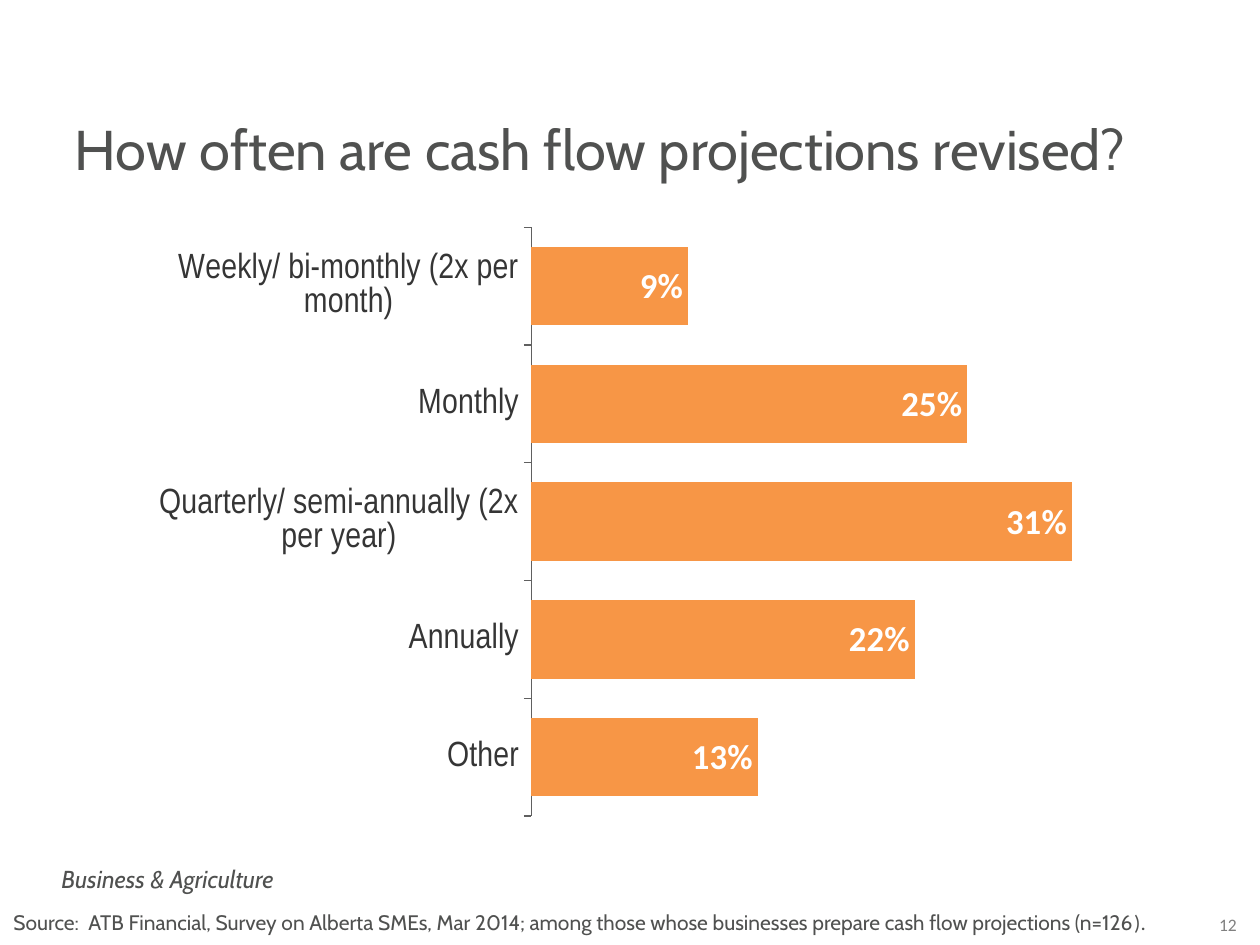
from pptx import Presentation
from pptx.chart.data import CategoryChartData
from pptx.dml.color import RGBColor
from pptx.enum.chart import XL_CHART_TYPE, XL_LABEL_POSITION, XL_TICK_LABEL_POSITION, XL_TICK_MARK
from pptx.enum.text import MSO_ANCHOR, PP_ALIGN
from pptx.oxml import parse_xml
from pptx.oxml.ns import nsdecls
from pptx.util import Emu, Pt

PX = 914400 // 126
GREY, ORANGE = "505150", "F79646"

# Content
TITLE = "How often are cash flow projections revised?"
REVISIONS = [  # top to bottom
    ("Weekly/ bi-monthly (2x per month)", 0.09),
    ("Monthly", 0.25),
    ("Quarterly/ semi-annually (2x per year)", 0.31),
    ("Annually", 0.22),
    ("Other", 0.13),
]
SOURCE = [
    ("Source:  ATB Financial, Survey on Alberta SMEs, Mar 2014; among those "
     "whose businesses prepare cash flow projections (n=126", "Cabin"),
    (").", "Calibri"),
]
# box in px, runs of (words, font), format, alignment
NOTES = [
    ((49, 857, 354, 43), [("Business & Agriculture", "Cabin")],
     dict(size=Pt(14), italic=True, color=GREY), PP_ALIGN.LEFT),
    ((1, 903, 1173, 38), SOURCE, dict(size=Pt(12), color=GREY), PP_ALIGN.LEFT),
    ((1197, 907, 62, 34), [("12", "Calibri")], dict(size=Pt(10), color="808080"), PP_ALIGN.CENTER),
]
TITLE_BOX = (62, 108, 1113, 81)
CHART_BOX = (159, 194, 983, 640)
PLOT = dict(x=0.373, y=0.052, w=0.627, h=0.92)


def px(*lengths):
    return [Emu(length * PX) for length in lengths]


def rgb(value):
    return RGBColor.from_string(value)


def style(font, color, **formats):
    font.color.rgb = rgb(color)
    for name, value in formats.items():
        setattr(font, name, value)


def fill_text(frame, runs, formats, align):
    frame.word_wrap = True
    frame.vertical_anchor = MSO_ANCHOR.MIDDLE
    paragraph = frame.paragraphs[0]
    paragraph.alignment = align
    for words, font_name in runs:
        run = paragraph.add_run()
        run.text = words
        style(run.font, name=font_name, **formats)


deck = Presentation()
deck.slide_width, deck.slide_height = px(1260, 945)
slide = deck.slides.add_slide(deck.slide_layouts[5])

# Title
title = slide.shapes.title
title.left, title.top, title.width, title.height = px(*TITLE_BOX)
fill_text(title.text_frame, [(TITLE, "Cabin")], dict(size=Pt(32), color=GREY), PP_ALIGN.LEFT)

# Bar chart: categories run upwards from the bottom
data = CategoryChartData(number_format="0%")
data.categories = [label for label, _ in reversed(REVISIONS)]
data.add_series("Series 1", [share for _, share in reversed(REVISIONS)])
chart = slide.shapes.add_chart(XL_CHART_TYPE.BAR_STACKED, *px(*CHART_BOX), data).chart
chart.has_legend = chart.has_title = False
style(chart.font, "353535", name="Cabin", size=Pt(14), bold=True)

bars = chart.plots[0]
bars.gap_width, bars.overlap, bars.vary_by_categories = 50, 100, False
bars.series[0].format.fill.solid()
bars.series[0].format.fill.fore_color.rgb = rgb(ORANGE)

bars.has_data_labels = True
labels = bars.data_labels
label_formats = dict(show_value=True, position=XL_LABEL_POSITION.INSIDE_END,
                     number_format="0%", number_format_is_linked=False)
for name, value in label_formats.items():
    setattr(labels, name, value)
style(labels.font, "FFFFFF", name="Calibri", size=Pt(20), bold=True)

# Axes
frequency = chart.category_axis
frequency.major_tick_mark = XL_TICK_MARK.OUTSIDE
frequency.tick_label_position = XL_TICK_LABEL_POSITION.LOW
frequency.format.line.color.rgb = rgb("606060")
frequency.format.line.width = Pt(0.75)
style(frequency.tick_labels.font, "353535", name="Arial Narrow", size=Pt(20), bold=False)
share_axis = chart.value_axis
share_axis.minimum_scale, share_axis.maximum_scale = 0, 0.35
share_axis.has_major_gridlines = share_axis.visible = False

# Fixed inner plot area
plot_area = bars.series[0].format.fill and chart.element.chart.plotArea
for old_layout in plot_area.findall("{*}layout"):
    plot_area.remove(old_layout)
parts = "".join(f'<c:{side} val="{value}"/>' for side, value in PLOT.items())
plot_area.insert(0, parse_xml(
    f'<c:layout {nsdecls("c")}><c:manualLayout><c:layoutTarget val="inner"/>'
    f'<c:xMode val="edge"/><c:yMode val="edge"/>{parts}</c:manualLayout></c:layout>'))

# Segment, source and page number
for box, runs, formats, align in NOTES:
    fill_text(slide.shapes.add_textbox(*px(*box)).text_frame, runs, formats, align)

deck.save("out.pptx")
